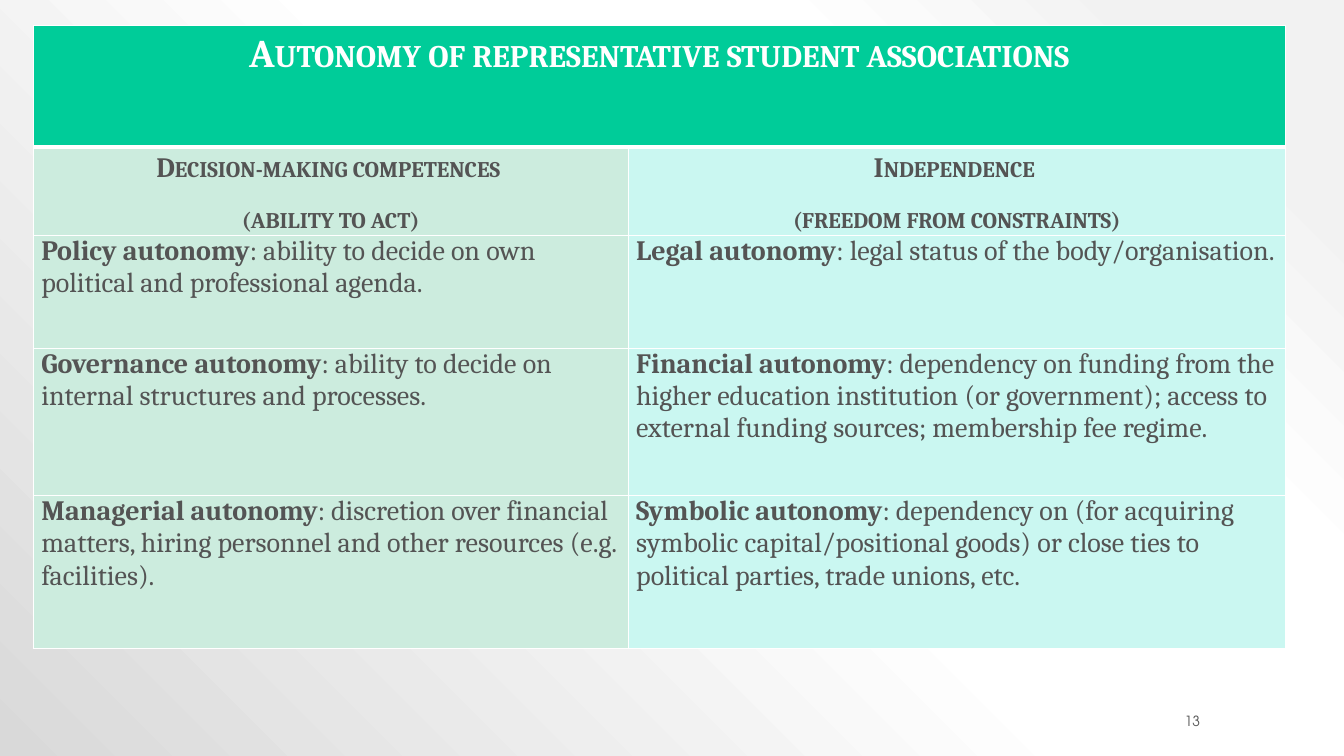
from lxml import etree
from pptx import Presentation, oxml
from pptx.dml.color import RGBColor
from pptx.enum import text
from pptx.oxml import ns
from pptx.util import Inches, Pt

WHITE = RGBColor(0xFF, 0xFF, 0xFF)
GREY = RGBColor(0x54, 0x54, 0x54)
EMERALD = RGBColor(0x00, 0xCC, 0x99)
MINT = RGBColor(0xCC, 0xEC, 0xDE)
AQUA = RGBColor(0xCA, 0xF7, 0xF1)

BACKDROP_STOPS = [(10, "F2F2F2"), (28, "FFFFFF"), (48, "FFFFFF"), (100, "D9D9D9")]
COLUMN_WIDTHS = [5.9, 6.52]
ROW_HEIGHTS = [1.21, 0.69, 1.12, 1.46, 1.52]
TITLE = "Autonomy of representative student associations"
HEADINGS = [
    ["Decision-making competences ", "(ability to act)"],
    ["Independence ", "(freedom from constraints)"],
]
AUTONOMIES = [
    [
        ("Policy autonomy", ": ability to decide on own political and professional agenda."),
        ("Legal autonomy", ": legal status of the body/organisation."),
    ],
    [
        ("Governance autonomy", ": ability to decide on internal structures and processes."),
        ("Financial autonomy", ": dependency on funding from the higher education institution "
         "(or government); access to external funding sources; membership fee regime."),
    ],
    [
        ("Managerial autonomy", ": discretion over financial matters, hiring personnel "
         "and other resources (e.g. facilities)."),
        ("Symbolic autonomy", ": dependency on (for acquiring symbolic capital/positional goods) "
         "or close ties to political parties, trade unions, etc."),
    ],
]


def set_background(slide):
    """Fill the slide with a radial gradient centred on the top right corner."""
    fill = slide.background.fill
    fill.gradient()
    bg_pr = slide.element.find(".//" + ns.qn("p:bgPr"))
    stops = "".join(
        f'<a:gs pos="{pos * 1000}"><a:srgbClr val="{color}"/></a:gs>'
        for pos, color in BACKDROP_STOPS
    )
    grad = oxml.parse_xml(
        f'<a:gradFill {ns.nsdecls("a")} rotWithShape="1"><a:gsLst>{stops}</a:gsLst>'
        '<a:path path="circle"><a:fillToRect l="100000" b="100000"/></a:path></a:gradFill>'
    )
    bg_pr.replace(bg_pr.find(ns.qn("a:gradFill")), grad)


def add_run(p, content, size=20, color=GREY, font="Cambria", bold=False, small_caps=False):
    """Append a formatted run to a paragraph."""
    r = p.add_run()
    r.text = content
    r.font.size = Pt(size)
    r.font.name = font
    r.font.bold = bold
    r.font.color.rgb = color
    if small_caps:
        r.font._element.set("cap", "small")


def set_borders(cell, top=1, bottom=1):
    """Draw white borders around a cell, with widths in points."""
    tc_pr = cell._tc.get_or_add_tcPr()
    for i, (side, width) in enumerate([("L", 1), ("R", 1), ("T", top), ("B", bottom)]):
        ln = etree.Element(ns.qn(f"a:ln{side}"), w=str(Pt(width)))
        fill = etree.SubElement(ln, ns.qn("a:solidFill"))
        etree.SubElement(fill, ns.qn("a:srgbClr"), val=str(WHITE))
        tc_pr.insert(i, ln)


def style_cell(cell, fill, margin=0.08, **borders):
    """Set the fill, margins and borders of a cell."""
    cell.fill.solid()
    cell.fill.fore_color.rgb = fill
    cell.margin_left = cell.margin_right = Inches(margin)
    cell.margin_top = cell.margin_bottom = 0
    set_borders(cell, **borders)


def fill_heading(cell, lines, fill, size=20, color=GREY, **borders):
    """Write centred small-caps lines into a heading cell."""
    style_cell(cell, fill, margin=0.07, **borders)
    tf = cell.text_frame
    for i, line in enumerate(lines):
        p = tf.add_paragraph() if i else tf.paragraphs[0]
        p.alignment = text.PP_ALIGN.CENTER
        p.line_spacing = 1.15
        p.space_after = Pt(10)
        add_run(p, line, size=size, color=color, bold=True, small_caps=True)


def fill_definition(cell, term, meaning, fill):
    """Write a bold term and its meaning into a body cell."""
    style_cell(cell, fill)
    p = cell.text_frame.paragraphs[0]
    add_run(p, term, bold=True)
    add_run(p, meaning)


def add_autonomy_table(slide):
    """Add the table of autonomy dimensions."""
    table = slide.shapes.add_table(
        len(ROW_HEIGHTS), len(COLUMN_WIDTHS), Inches(0.33), Inches(0.25),
        Inches(sum(COLUMN_WIDTHS)), Inches(sum(ROW_HEIGHTS)),
    ).table
    for column, width in zip(table.columns, COLUMN_WIDTHS):
        column.width = Inches(width)
    for row, height in zip(table.rows, ROW_HEIGHTS):
        row.height = Inches(height)

    table.cell(0, 0).merge(table.cell(0, 1))
    fill_heading(table.cell(0, 0), [TITLE], EMERALD, size=28, color=WHITE, bottom=3)
    style_cell(table.cell(0, 1), EMERALD, bottom=3)
    for c, fill in enumerate([MINT, AQUA]):
        fill_heading(table.cell(1, c), HEADINGS[c], fill, top=3)
        for r, definitions in enumerate(AUTONOMIES, start=2):
            fill_definition(table.cell(r, c), *definitions[c], fill)


def add_page_number(slide, number):
    """Add the page number at the bottom right."""
    sp = slide.shapes.add_textbox(Inches(10.75), Inches(7.05), Inches(1.25), Inches(0.2))
    tf = sp.text_frame
    tf.word_wrap = True
    tf.vertical_anchor = text.MSO_ANCHOR.MIDDLE
    p = tf.paragraphs[0]
    p.alignment = text.PP_ALIGN.RIGHT
    add_run(p, number, size=10, font="TeX Gyre Adventor")


def main():
    """Build the slide and save it."""
    prs = Presentation()
    prs.slide_width = Inches(13.33)
    prs.slide_height = Inches(7.5)
    slide = prs.slides.add_slide(prs.slide_layouts[6])
    set_background(slide)
    add_autonomy_table(slide)
    add_page_number(slide, "13")
    prs.save("out.pptx")


if __name__ == "__main__":
    main()
